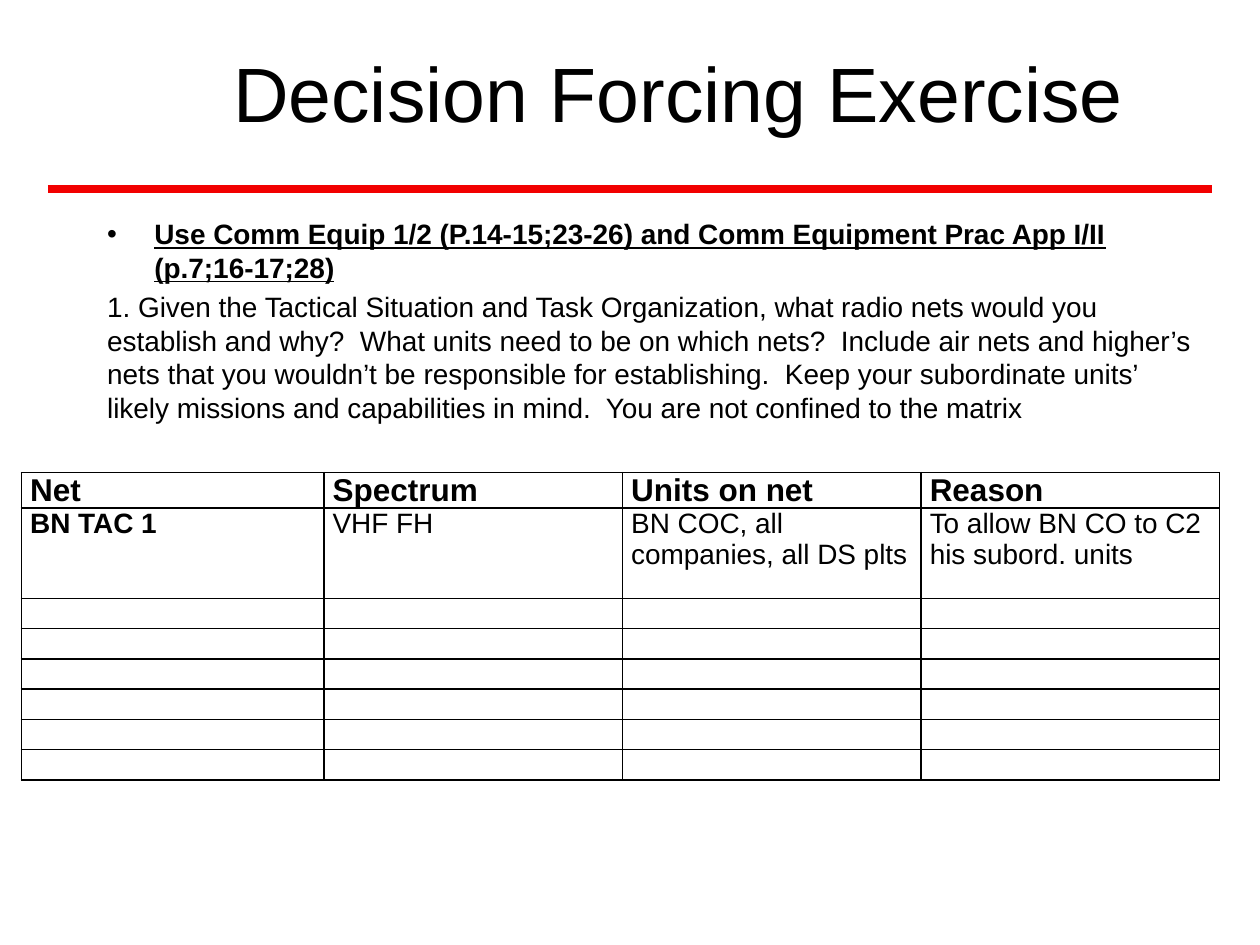
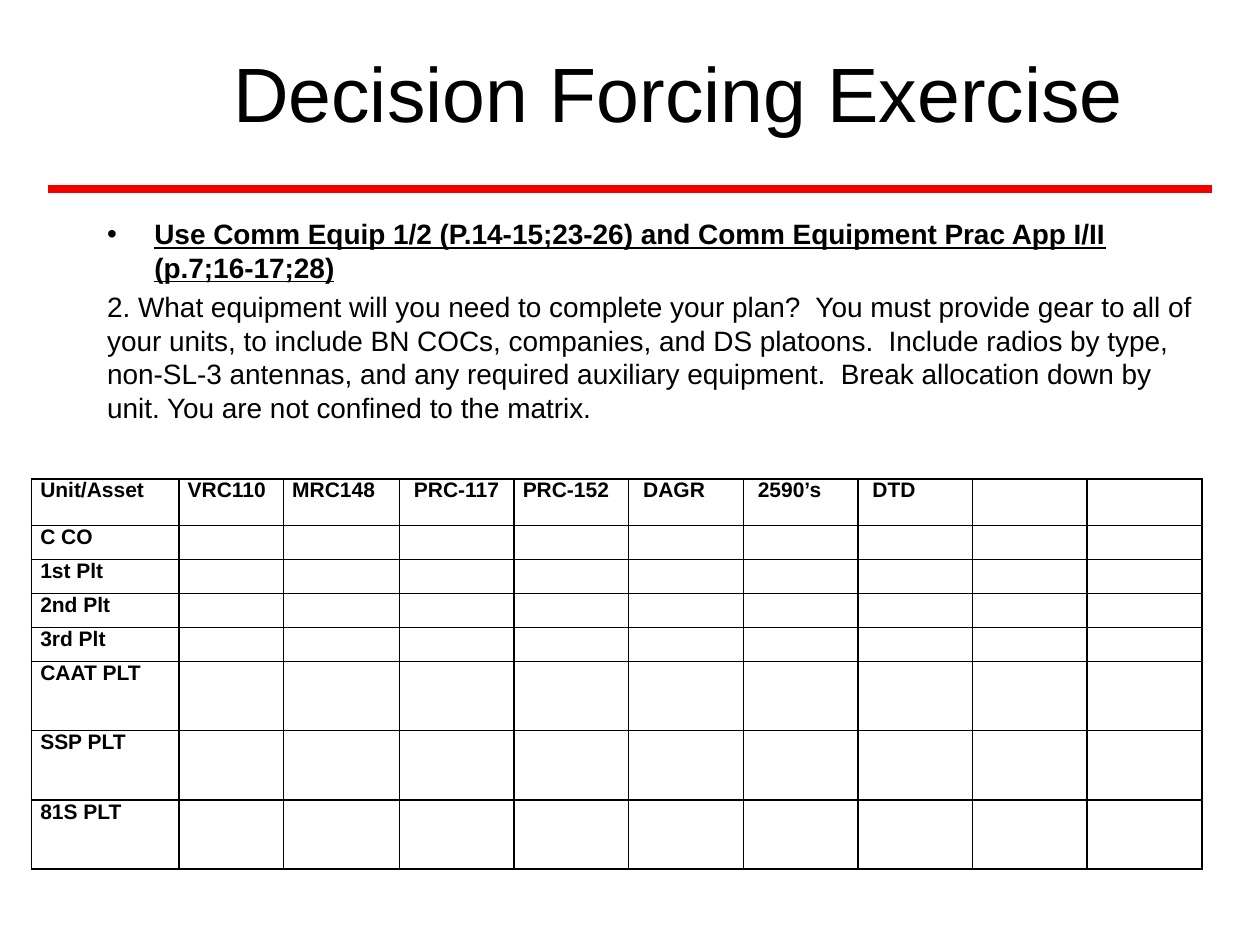
"""Build two decision forcing exercise slides with matrices to fill in."""
from lxml.etree import SubElement
from pptx import Presentation
from pptx.dml.color import RGBColor
from pptx.enum.shapes import MSO_CONNECTOR
from pptx.enum.text import MSO_ANCHOR, MSO_AUTO_SIZE, PP_ALIGN
from pptx.oxml.ns import qn
from pptx.util import Inches, Pt

COLORS = {"text": "000000", "rule": "F20000", "cell": "FFFFFF", "border": "000000"}
FONT = "Arial"
TITLE = "Decision Forcing Exercise"
REFERENCE = "Use Comm Equip 1/2 (P.14-15;23-26) and Comm Equipment Prac App I/II (p.7;16-17;28)"

EXERCISES = [
    {
        "question": "1. Given the Tactical Situation and Task Organization, what radio nets would you "
        "establish and why?  What units need to be on which nets?  Include air nets and higher’s "
        "nets that you wouldn’t be responsible for establishing.  Keep your subordinate units’ "
        "likely missions and capabilities in mind.  You are not confined to the matrix",
        "position": (0.17, 3.75),
        "columns": [2.4] + [2.37] * 3,
        "rows": [0.24, 0.72] + [0.24] * 6,
        "header_size": 18,
        "body_size": 16,
        "cells": [
            ["Net", "Spectrum", "Units on net", "Reason"],
            ["BN TAC 1", "VHF FH", "BN COC, all companies, all DS plts",
             "To allow BN CO to C2 his subord. units"],
        ],
    },
    {
        "question": "2. What equipment will you need to complete your plan?  You must provide gear to all of "
        "your units, to include BN COCs, companies, and DS platoons.  Include radios by type, "
        "non-SL-3 antennas, and any required auxiliary equipment.  Break allocation down by "
        "unit. You are not confined to the matrix.",
        "position": (0.25, 3.8),
        "columns": [1.17, 0.83, 0.92] + [0.91] * 7,
        "rows": [0.37] + [0.27] * 4 + [0.55] * 3,
        "header_size": 12,
        "body_size": 12,
        "cells": [
            ["Unit/Asset", "VRC110", "MRC148", " PRC-117", "PRC-152", " DAGR", " 2590’s", " DTD"],
            ["C CO"], ["1st Plt"], ["2nd Plt"], ["3rd Plt"],
            ["CAAT PLT"], ["SSP PLT"], ["81S PLT"],
        ],
    },
]


def color(name):
    return RGBColor.from_string(COLORS[name])


def format_runs(paragraph, size, bold=False, underline=False):
    for run in paragraph.runs:
        run.font.name = FONT
        run.font.size = Pt(size)
        run.font.bold = bold
        run.font.underline = underline
        run.font.color.rgb = color("text")


def place(shape, left, top, width, height):
    shape.left, shape.top = Inches(left), Inches(top)
    shape.width, shape.height = Inches(width), Inches(height)


def add_rule(slide, layout):
    rule = slide.shapes.add_connector(
        MSO_CONNECTOR.STRAIGHT, Inches(0.38), Inches(1.5), Inches(9.62), Inches(1.5))
    rule.line.color.rgb = color("rule")
    rule.line.width = Pt(5)
    SubElement(rule.element.spPr, qn("a:effectLst"))
    layout.shapes.element.append(rule.element)


def fill_title(shape):
    place(shape, 1.44, 0.04, 7.89, 1.38)
    frame = shape.text_frame
    frame.text = TITLE
    frame.vertical_anchor = MSO_ANCHOR.MIDDLE
    frame.paragraphs[0].alignment = PP_ALIGN.CENTER
    format_runs(frame.paragraphs[0], 44)


def fill_body(shape, question):
    place(shape, 0.75, 1.67, 8.92, 4.5)
    frame = shape.text_frame
    frame.auto_size = MSO_AUTO_SIZE.NONE
    frame.text = REFERENCE
    reference = frame.paragraphs[0]
    reference.space_before = Pt(0)
    format_runs(reference, 16, bold=True, underline=True)
    task = frame.add_paragraph()
    task.text = question
    properties = task._p.get_or_add_pPr()
    properties.set("marL", "0")
    properties.set("indent", "0")
    SubElement(properties, qn("a:buNone"))
    format_runs(task, 16)


def add_borders(cell):
    properties = cell._tc.get_or_add_tcPr()
    for side in ("lnL", "lnR", "lnT", "lnB"):
        line = SubElement(properties, qn(f"a:{side}"), w=str(Pt(1)))
        fill = SubElement(line, qn("a:solidFill"))
        SubElement(fill, qn("a:srgbClr"), val=COLORS["border"])


def format_cell(cell, text, size, bold):
    cell.margin_left = cell.margin_right = Inches(0.07)
    cell.margin_top = cell.margin_bottom = 0
    add_borders(cell)
    cell.fill.solid()
    cell.fill.fore_color.rgb = color("cell")
    paragraph = cell.text_frame.paragraphs[0]
    if text:
        paragraph.text = text
        format_runs(paragraph, size, bold)
    else:
        SubElement(paragraph._p, qn("a:endParaRPr"), sz="1200")


def add_matrix(slide, exercise):
    columns, rows = exercise["columns"], exercise["rows"]
    left, top = exercise["position"]
    table = slide.shapes.add_table(
        len(rows), len(columns), Inches(left), Inches(top),
        Inches(sum(columns)), Inches(sum(rows))).table
    table.first_row = table.horz_banding = False
    for column, width in zip(table.columns, columns):
        column.width = Inches(width)
    for row, height in zip(table.rows, rows):
        row.height = Inches(height)
    texts = {(r, c): text for r, line in enumerate(exercise["cells"]) for c, text in enumerate(line)}
    for r in range(len(rows)):
        size = exercise["body_size"] if r else exercise["header_size"]
        for c in range(len(columns)):
            format_cell(table.cell(r, c), texts.get((r, c), ""), size, r == 0 or c == 0)


def main():
    presentation = Presentation()
    presentation.slide_width, presentation.slide_height = Inches(10), Inches(7.5)
    layout = presentation.slide_layouts[1]
    for number, exercise in enumerate(EXERCISES):
        slide = presentation.slides.add_slide(layout)
        if number == 0:
            add_rule(slide, layout)
        fill_title(slide.shapes.title)
        fill_body(slide.placeholders[1], exercise["question"])
        add_matrix(slide, exercise)
    presentation.save("out.pptx")


if __name__ == "__main__":
    main()
